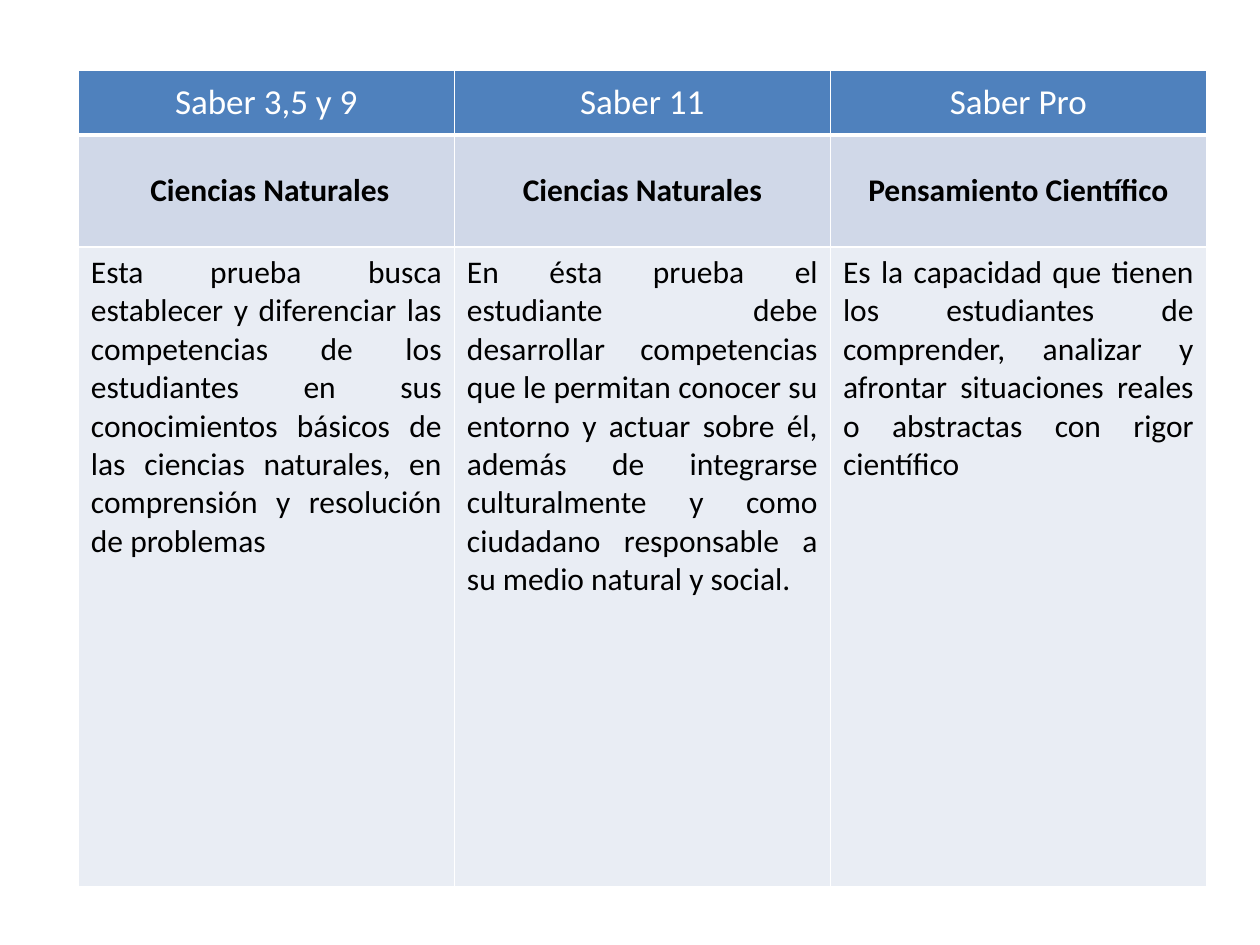
from lxml.etree import SubElement
from pptx import Presentation
from pptx.dml.color import RGBColor
from pptx.enum.text import MSO_ANCHOR, PP_ALIGN
from pptx.oxml.ns import qn
from pptx.util import Cm, Pt


def color(value):
    return RGBColor.from_string(value)


def add_border(cell, side, points):
    line = SubElement(cell._tc.get_or_add_tcPr(), qn(f"a:ln{side}"), w=str(Pt(points)))
    fill = SubElement(line, qn("a:solidFill"))
    SubElement(fill, qn("a:srgbClr"), val="FFFFFF")


presentation = Presentation()
presentation.slide_width = Cm(25.4)
presentation.slide_height = Cm(19.05)
slide = presentation.slides.add_slide(presentation.slide_layouts[6])

# Table content, one list per row
content = [
    ["Saber 3,5 y 9", "Saber 11", "Saber Pro"],
    [" Ciencias Naturales", "Ciencias Naturales", "Pensamiento Científico"],
    [
        "Esta prueba busca establecer y diferenciar las competencias de los "
        "estudiantes en sus conocimientos básicos de las ciencias naturales, "
        "en comprensión y resolución de problemas",
        "En ésta prueba el estudiante debe desarrollar competencias que le "
        "permitan conocer su entorno y actuar sobre él, además de integrarse "
        "culturalmente y como ciudadano responsable a su medio natural y social. ",
        "Es la capacidad que tienen los estudiantes de comprender, analizar y "
        "afrontar situaciones reales o abstractas con rigor científico",
    ],
]

# Row look: height, fill, text colour, size, bold, alignment, anchor
row_styles = [
    (Cm(1.3), "4F81BD", "FFFFFF", 20, False, PP_ALIGN.CENTER, MSO_ANCHOR.MIDDLE),
    (Cm(2.26), "D0D8E8", "000000", 18, True, PP_ALIGN.CENTER, MSO_ANCHOR.MIDDLE),
    (Cm(12.9), "E9EDF4", "000000", 18, False, PP_ALIGN.JUSTIFY, MSO_ANCHOR.TOP),
]

# Table
table = slide.shapes.add_table(
    3, 3, Cm(1.58), Cm(1.42), Cm(22.74), Cm(16.46)
).table
for column in table.columns:
    column.width = Cm(7.58)

for row_index, (texts, style) in enumerate(zip(content, row_styles)):
    height, fill, text_color, size, bold, alignment, anchor = style
    table.rows[row_index].height = height
    for column_index, text in enumerate(texts):
        cell = table.cell(row_index, column_index)

        # White grid, with a thicker line under the header
        for side in "LRTB":
            thick = (row_index, side) in ((0, "B"), (1, "T"))
            add_border(cell, side, 3 if thick else 1)
        cell.fill.solid()
        cell.fill.fore_color.rgb = color(fill)
        cell.vertical_anchor = anchor

        paragraph = cell.text_frame.paragraphs[0]
        paragraph.alignment = alignment
        run = paragraph.add_run()
        run.text = text
        run.font.name = "Calibri"
        run.font.size = Pt(size)
        run.font.bold = bold
        run.font.color.rgb = color(text_color)

presentation.save("out.pptx")
